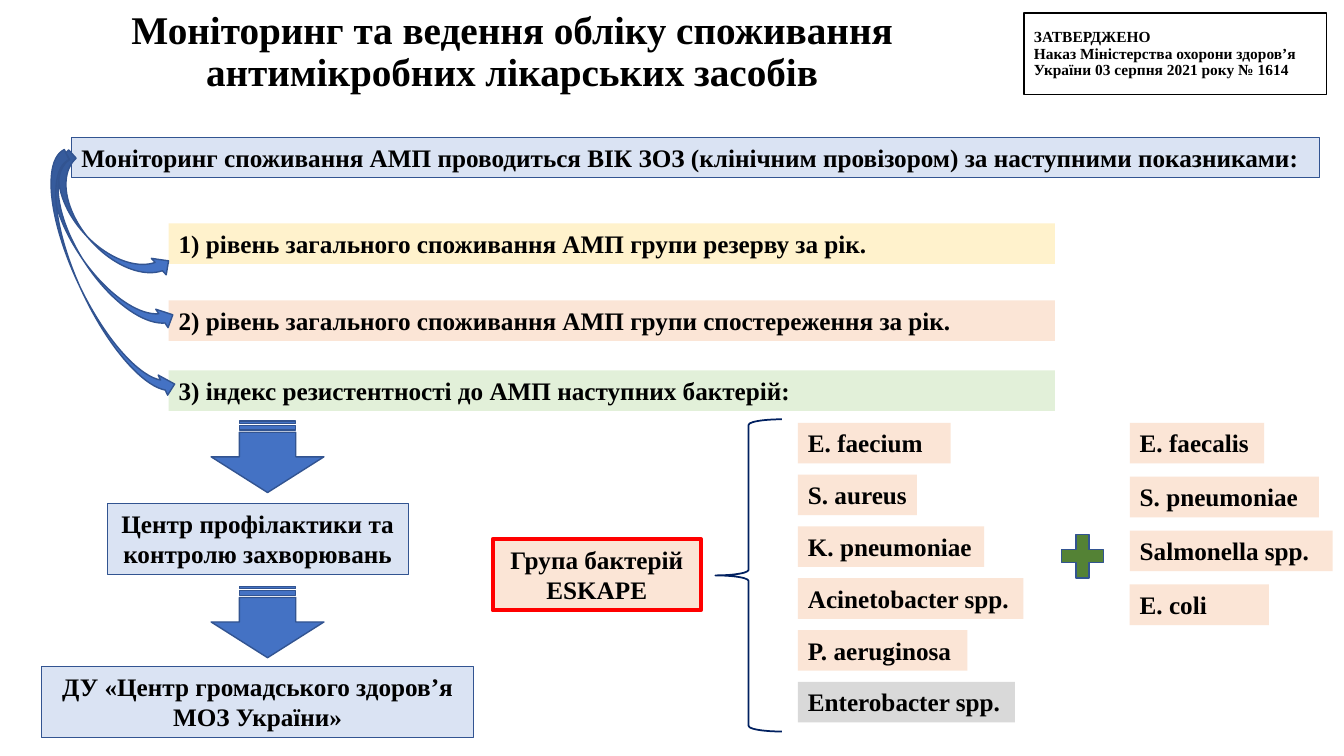
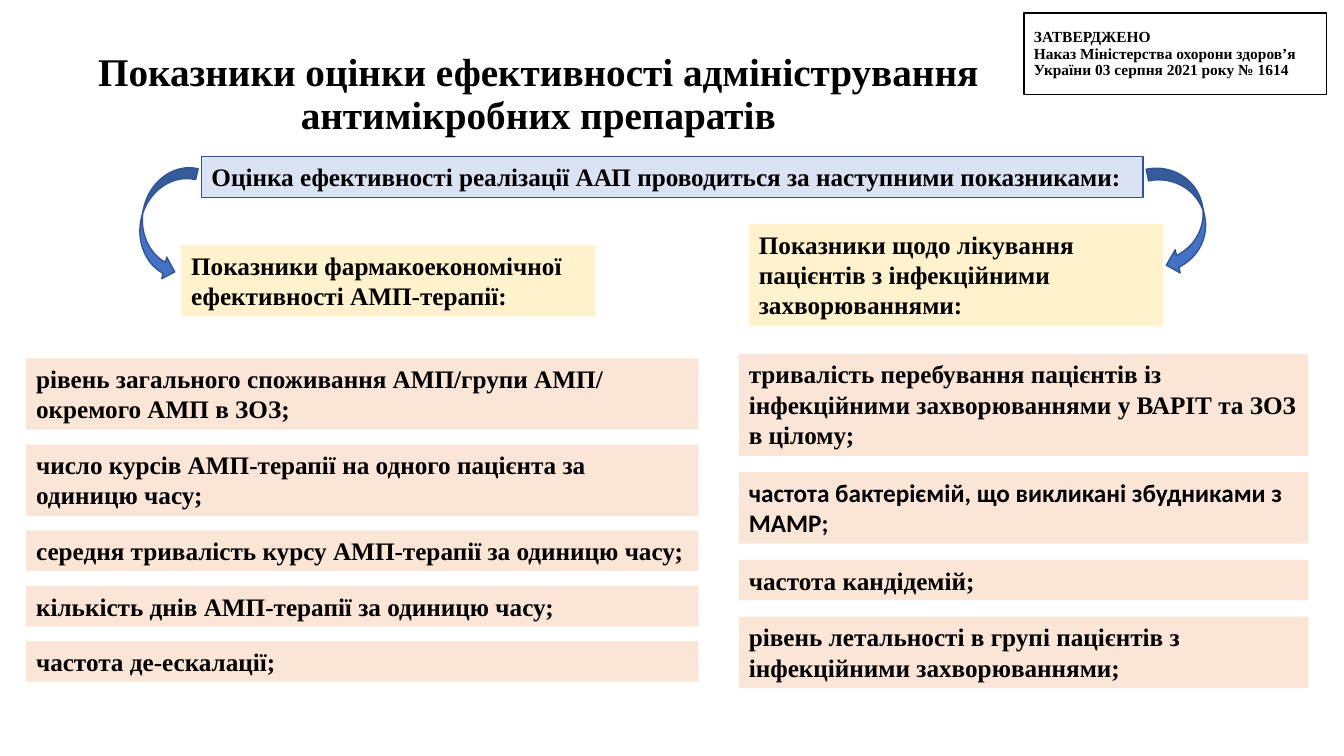
from dataclasses import dataclass
from typing import Optional, Sequence

from pptx import Presentation
from pptx.dml.color import RGBColor
from pptx.enum.shapes import MSO_SHAPE as Preset
from pptx.enum.text import MSO_ANCHOR as Anchor, MSO_AUTO_SIZE as AutoSize, PP_ALIGN as Align
from pptx.util import Pt

# Shared palette and type
BLACK, RED, NAVY = "000000", "FF0000", "002060"
BLUE, OUTLINE, PALE_BLUE = "4472C4", "325491", "DAE3F3"
YELLOW, PEACH, PALE_GREEN = "FFF2CC", "FBE5D6", "E2F0D9"
GREY, GREEN = "D9D9D9", "548235"
SERIF, SANS = "Times New Roman", "Calibri"
TITLE_SIZE, BODY_SIZE, STAMP_SIZE = 28, 18, 11
LINE_HEIGHT, BOX_PADDING = 22, 7

APPROVAL = ("ЗАТВЕРДЖЕНО \vНаказ Міністерства охорони здоров’я "
            "України 03 серпня 2021 року № 1614")


@dataclass
class Box:
    text: str
    x: float
    y: float
    width: float
    lines: int = 1
    fill: str = PEACH
    line: Optional[str] = None
    line_width: float = 0.75
    align: Align = Align.LEFT
    font: str = SERIF

    @property
    def height(self) -> float:
        return BOX_PADDING + LINE_HEIGHT * self.lines


@dataclass
class Figure:
    preset: Preset
    x: float
    y: float
    width: float
    height: float
    rotation: float = 0
    flipped: bool = False
    fill: Optional[str] = BLUE
    line: str = OUTLINE
    line_width: float = 1


@dataclass
class Item:
    text: str
    lines: int = 1
    font: str = SERIF


@dataclass
class Chip:
    text: str
    width: float
    fill: str = PEACH


def color(value: str) -> RGBColor:
    return RGBColor.from_string(value)


def write(shape, text: str, size: float, align: Align, font: str = SERIF,
          anchor: Anchor = Anchor.TOP, spacing: Optional[float] = None) -> None:
    frame = shape.text_frame
    frame.text = text
    frame.word_wrap = True
    frame.vertical_anchor = anchor
    for paragraph in frame.paragraphs:
        paragraph.alignment = align
        paragraph.line_spacing = spacing
        for run in paragraph.runs:
            run.font.name = font
            run.font.size = Pt(size)
            run.font.bold = True
            run.font.color.rgb = color(BLACK)


def draw_figure(slide, figure: Figure):
    shape = slide.shapes.add_shape(figure.preset, Pt(figure.x), Pt(figure.y),
                                   Pt(figure.width), Pt(figure.height))
    shape.shadow.inherit = False
    shape.rotation = figure.rotation
    if figure.flipped:
        shape.element.spPr.xfrm.set("flipH", "1")
    if figure.fill:
        shape.fill.solid()
        shape.fill.fore_color.rgb = color(figure.fill)
    else:
        shape.fill.background()
    if figure.line:
        shape.line.color.rgb = color(figure.line)
        shape.line.width = Pt(figure.line_width)
    else:
        shape.line.fill.background()
    return shape


def draw_box(slide, box: Box) -> None:
    shape = draw_figure(slide, Figure(Preset.RECTANGLE, box.x, box.y, box.width, box.height,
                                      fill=box.fill, line=box.line, line_width=box.line_width))
    write(shape, box.text, BODY_SIZE, box.align, box.font)
    shape.text_frame.auto_size = AutoSize.SHAPE_TO_FIT_TEXT


def draw_stack(slide, items: Sequence[Item], x: float, y: float,
               width: float, gap: float) -> None:
    for item in items:
        box = Box(item.text, x, y, width, item.lines, font=item.font)
        draw_box(slide, box)
        y += box.height + gap


def draw_chips(slide, chips: Sequence[Chip], x: float, y: float, pitch: float) -> None:
    for row, chip in enumerate(chips):
        draw_box(slide, Box(chip.text, x, y + row * pitch, chip.width, fill=chip.fill))


def start_slide(deck, title_text: str, x: float, y: float, width: float, height: float):
    """Add a slide with its title and the approval stamp."""
    slide = deck.slides.add_slide(deck.slide_layouts[5])
    title = slide.shapes.title
    title.left, title.top, title.width, title.height = Pt(x), Pt(y), Pt(width), Pt(height)
    write(title, title_text, TITLE_SIZE, Align.CENTER, anchor=Anchor.MIDDLE, spacing=0.9)
    title.text_frame.auto_size = AutoSize.NONE
    stamp = draw_figure(slide, Figure(Preset.RECTANGLE, 731.5, 9.4, 216, 58.3,
                                      fill=None, line=BLACK))
    write(stamp, APPROVAL, STAMP_SIZE, Align.LEFT, anchor=Anchor.MIDDLE, spacing=0.9)
    return slide


def build_monitoring(deck) -> None:
    slide = start_slide(deck, "Моніторинг та ведення обліку споживання "
                        "антимікробних лікарських засобів", 19.5, 18, 692.5, 39.6)

    # Heading and the three indicators
    draw_box(slide, Box("Моніторинг споживання АМП проводиться ВІК ЗОЗ (клінічним "
                        "провізором) за наступними показниками:",
                        51, 98, 891.5, fill=PALE_BLUE, line=OUTLINE))
    for text, y, fill in (
        ("1) рівень загального споживання АМП групи резерву за рік.", 159.5, YELLOW),
        ("2) рівень загального споживання АМП групи спостереження за рік.", 214.5, PEACH),
        ("3) індекс резистентності до АМП наступних бактерій:", 264.5, PALE_GREEN),
    ):
        draw_box(slide, Box(text, 120.5, y, 633, fill=fill))
    for x, y, length, rotation in ((59.8, 103, 114.5, 318), (57.6, 103.7, 149, 326.4),
                                   (56.9, 104.4, 193, 334.8)):
        draw_figure(slide, Figure(Preset.CURVED_RIGHT_ARROW, x, y, 31.7, length, rotation))

    # Bacteria: ESKAPE group plus the additional species
    draw_chips(slide, (
        Chip("E. faecium", 109), Chip("S. aureus", 85), Chip("K. pneumoniae", 133),
        Chip("Acinetobacter spp.", 161), Chip("P. aeruginosa", 121),
        Chip("Enterobacter spp.", 155, GREY),
    ), 570, 302, 37)
    draw_chips(slide, (
        Chip("E. faecalis", 96), Chip("S. pneumoniae", 135),
        Chip("Salmonella spp.", 145), Chip("E. coli", 99.5),
    ), 807, 302, 38.5)
    draw_figure(slide, Figure(Preset.LEFT_BRACE, 511, 299.5, 47.5, 223,
                              fill=None, line=NAVY, line_width=1.25))
    draw_figure(slide, Figure(Preset.MATH_PLUS, 753, 376, 40.5, 42.5, fill=GREEN))
    draw_box(slide, Box("Група бактерій ESKAPE", 352, 385, 148.5, 2,
                        line=RED, line_width=3, align=Align.CENTER))

    # Reporting chain
    for text, x, y, width in (
        ("Центр профілактики та контролю захворювань", 76.5, 359.5, 215),
        ("ДУ «Центр громадського здоров’я МОЗ України»", 29.5, 476, 309),
    ):
        draw_box(slide, Box(text, x, y, width, 2, PALE_BLUE, OUTLINE, align=Align.CENTER))
    for y in (286, 404):
        draw_figure(slide, Figure(Preset.STRIPED_RIGHT_ARROW, 165.6, y, 51, 80.6, 90))


def build_indicators(deck) -> None:
    slide = start_slide(deck, "Показники оцінки ефективності адміністрування "
                        "антимікробних препаратів", 52, 16, 665, 104.4)

    # Heading with its two branches
    draw_box(slide, Box("Оцінка ефективності реалізації ААП проводиться за наступними "
                        "показниками:", 144, 112, 672.5, fill=PALE_BLUE, line=OUTLINE))
    draw_box(slide, Box("Показники фармакоекономічної ефективності АМП-терапії:",
                        129.5, 175, 296, 2, YELLOW))
    draw_box(slide, Box("Показники щодо лікування пацієнтів з інфекційними "
                        "захворюваннями:", 535, 160, 296, 3, YELLOW))
    draw_figure(slide, Figure(Preset.CURVED_RIGHT_ARROW, 101, 116, 31.7, 83.5, 12.8))
    draw_figure(slide, Figure(Preset.CURVED_RIGHT_ARROW, 826.5, 116.6, 34, 78.5, 348.1,
                              flipped=True))

    # Pharmacoeconomic indicators
    draw_stack(slide, (
        Item("рівень загального споживання АМП/групи АМП/ окремого АМП в ЗОЗ;", 2),
        Item("число курсів АМП-терапії на одного пацієнта за одиницю часу;", 2),
        Item("середня тривалість курсу АМП-терапії за одиницю часу;"),
        Item("кількість днів АМП-терапії за одиницю часу;"),
        Item("частота де-ескалації;"),
    ), 18.7, 256, 480.2, 10.5)

    # Treatment indicators
    draw_stack(slide, (
        Item("тривалість перебування пацієнтів із інфекційними захворюваннями "
             "у ВАРІТ та ЗОЗ в цілому;", 3),
        Item("частота бактеріємій, що викликані збудниками з МАМР;", 2, SANS),
        Item("частота кандідемій;"),
        Item("рівень летальності в групі пацієнтів з інфекційними захворюваннями;", 2),
    ), 527.8, 252.7, 406.8, 11.6)


def main() -> None:
    deck = Presentation()
    deck.slide_width, deck.slide_height = Pt(960), Pt(540)
    build_monitoring(deck)
    build_indicators(deck)
    deck.save("out.pptx")


if __name__ == "__main__":
    main()
